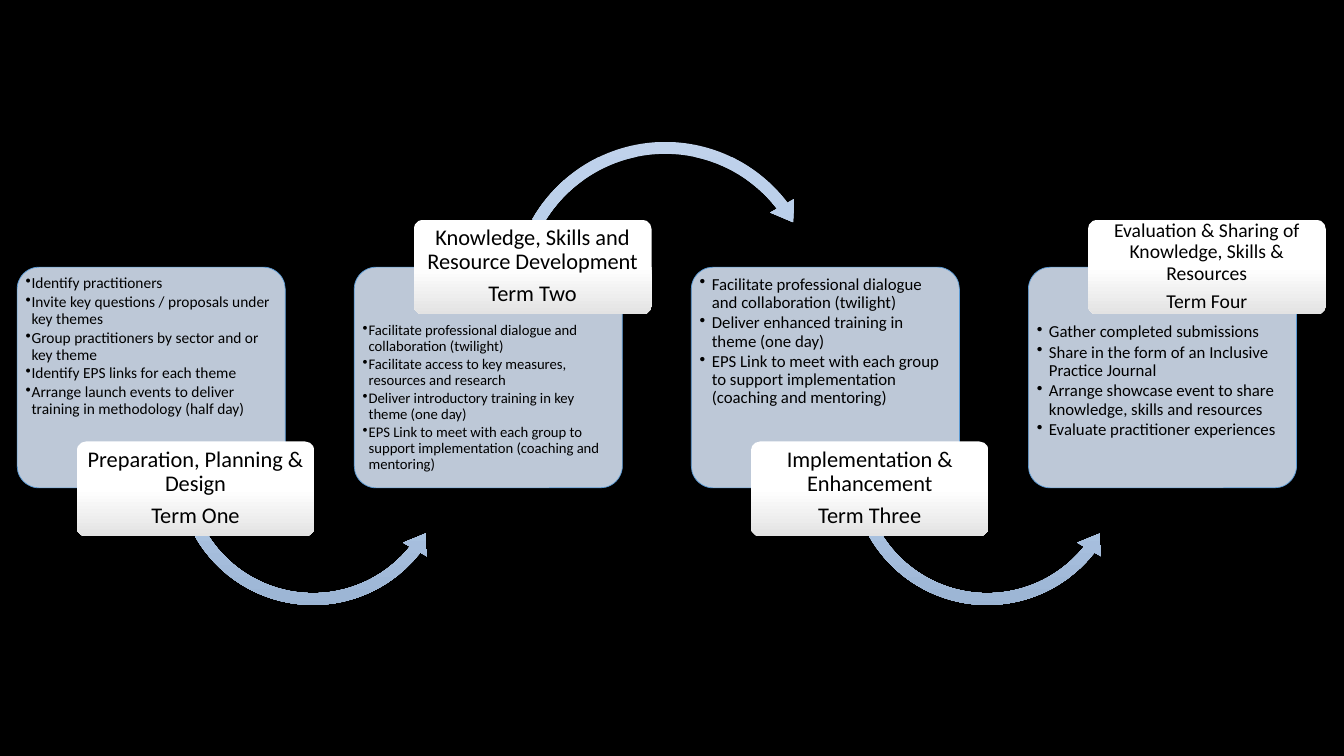
from copy import deepcopy
from dataclasses import dataclass

from pptx import Presentation
from pptx.dml.color import RGBColor
from pptx.enum.shapes import MSO_SHAPE
from pptx.enum.text import MSO_ANCHOR, PP_ALIGN
from pptx.oxml.ns import qn
from pptx.util import Inches, Pt

ROUND_RECT = MSO_SHAPE.ROUNDED_RECTANGLE
ARC_OVER = MSO_SHAPE.CIRCULAR_ARROW
ARC_UNDER = MSO_SHAPE.LEFT_CIRCULAR_ARROW
TOP, MIDDLE = MSO_ANCHOR.TOP, MSO_ANCHOR.MIDDLE
LEFT, CENTER = PP_ALIGN.LEFT, PP_ALIGN.CENTER

FONT = "Calibri"
COLORS = {"background": "000000", "text": "000000", "card": "D2DEEF", "card_line": "5B9BD5"}
GRADIENTS = {
    "arrow": ("C0D2EB", "B3CBE9", "9BB4D3"),
    "label": ("FFFFFF", "FFFFFF", "E3E3E3"),
}

# Grid in inches: four equal columns, offsets counted from a column's left edge
MARGIN = 0.17
COLUMN = (10.2 - MARGIN) / 3
CARD_TOP, CARD_W, CARD_H = 2.65, 2.66, 2.19
LABEL_DX, LABEL_W, LABEL_H = 0.59, 2.36, 0.94
LABEL_HIGH, LABEL_LOW = 2.18, 4.38


@dataclass
class Stage:
    title: str
    term: str
    title_size: float
    tasks: list[str]
    task_size: float
    indent: float


@dataclass
class Arc:
    kind: MSO_SHAPE
    dx: float
    top: float
    size: float
    adjustments: tuple[float, ...]


UNDER = Arc(ARC_UNDER, 1.51, 3.23, 2.85, (0.041, 5.173, 22.928, 90.245, 0.048))
OVER = Arc(ARC_OVER, 1.49, 1.33, 3.19, (0.037, 4.639, 193.606, 125.755, 0.043))

STAGES = [
    Stage("Preparation, Planning & Design", "Term One", 16, [
        "Identify practitioners",
        "Invite key questions / proposals under key themes",
        "Group practitioners by sector and or key theme",
        "Identify EPS links for each theme",
        "Arrange launch events to deliver training in methodology (half day)",
    ], 11, 0.06),
    Stage("Knowledge, Skills and Resource Development", "Term Two", 16, [
        "Facilitate professional dialogue and collaboration (twilight)",
        "Facilitate access to key measures, resources and research",
        "Deliver introductory training in key theme (one day)",
        "EPS Link to meet with each group to support implementation (coaching and mentoring)",
    ], 10.5, 0.06),
    Stage("Implementation & Enhancement", "Term Three", 16, [
        "Facilitate professional dialogue and collaboration (twilight)",
        "Deliver enhanced training in theme (one day)",
        "EPS Link to meet with each group to support implementation (coaching and mentoring)",
    ], 12, 0.12),
    Stage("Evaluation & Sharing of Knowledge, Skills & Resources", "Term Four", 14, [
        "Gather completed submissions",
        "Share in the form of an Inclusive Practice Journal",
        "Arrange showcase event to share knowledge, skills and resources",
        "Evaluate practitioner experiences",
    ], 12, 0.12),
]


def rgb(name: str) -> RGBColor:
    return RGBColor.from_string(COLORS[name])


def add_shape(s, kind: MSO_SHAPE, column: int, dx: float, top: float, width: float,
              height: float, adjustments: tuple[float, ...]):
    sp = s.shapes.add_shape(kind, Inches(MARGIN + column * COLUMN + dx), Inches(top),
                            Inches(width), Inches(height))
    sp.shadow.inherit = False
    for i, value in enumerate(adjustments):
        sp.adjustments[i] = value
    return sp


def fill_gradient(sp, name: str) -> None:
    """Three evenly spaced stops running from top to bottom, without an outline."""
    sp.fill.gradient()
    sp.fill.gradient_angle = 270
    stop_list = next(sp.element.spPr.iter(qn("a:gsLst")))
    stop_list.insert(1, deepcopy(stop_list[0]))
    for i, (stop, color) in enumerate(zip(sp.fill.gradient_stops, GRADIENTS[name])):
        stop.position = i / 2
        stop.color.rgb = RGBColor.from_string(color)
    sp.line.fill.background()


def write(sp, lines: list[str], size: float, gap: float, align: PP_ALIGN, anchor: MSO_ANCHOR,
          insets: tuple[float, float], indent: float = 0) -> None:
    """Fill a shape with paragraphs; gap is a share of the text size."""
    tf = sp.text_frame
    tf.word_wrap = True
    tf.vertical_anchor = anchor
    tf.margin_left = tf.margin_right = tf.margin_bottom = Inches(insets[0])
    tf.margin_top = Inches(insets[1])
    tf.text = "\n".join(lines)
    for p in tf.paragraphs:
        p.alignment = align
        p.line_spacing = 0.9
        p.space_after = Pt(size * gap)
        if indent:
            p.level = 1
            pPr = p._p.get_or_add_pPr()
            pPr.set("marL", str(Inches(indent)))
            pPr.set("indent", str(-Inches(indent)))
            bullet = pPr.makeelement(qn("a:buChar"), {"char": "•"})
            pPr.append(bullet)
        for r in p.runs:
            r.font.name = FONT
            r.font.size = Pt(size)
            r.font.color.rgb = rgb("text")


def add_card(s, column: int, stage: Stage, label_high: bool) -> None:
    sp = add_shape(s, ROUND_RECT, column, 0, CARD_TOP, CARD_W, CARD_H, (0.1,))
    sp.fill.solid()
    sp.fill.fore_color.rgb = rgb("card")
    color = next(sp.element.spPr.iter(qn("a:srgbClr")))
    color.append(color.makeelement(qn("a:alpha"), {"val": "90000"}))
    sp.line.color.rgb = rgb("card_line")
    sp.line.width = Pt(0.5)
    top_inset = 0.49 if label_high else 0.02
    write(sp, stage.tasks, stage.task_size, 0.15, LEFT, TOP, (0.02, top_inset), stage.indent)


def add_arc(s, column: int, arc: Arc) -> None:
    sp = add_shape(s, arc.kind, column, arc.dx, arc.top, arc.size, arc.size, arc.adjustments)
    fill_gradient(sp, "arrow")


def add_label(s, column: int, stage: Stage, high: bool) -> None:
    top = LABEL_HIGH if high else LABEL_LOW
    sp = add_shape(s, ROUND_RECT, column, LABEL_DX, top, LABEL_W, LABEL_H, (0.1,))
    fill_gradient(sp, "label")
    write(sp, [stage.title, stage.term], stage.title_size, 0.35, CENTER, MIDDLE, (0.03, 0.02))


def main() -> None:
    prs = Presentation()
    prs.slide_width, prs.slide_height = Inches(13.33), Inches(7.5)
    s = prs.slides.add_slide(prs.slide_layouts[6])
    s.background.fill.solid()
    s.background.fill.fore_color.rgb = rgb("background")

    # Labels alternate low and high; an arc leads from each stage to the next
    for column, stage in enumerate(STAGES):
        high = column % 2 == 1
        add_card(s, column, stage, high)
        if column < len(STAGES) - 1:
            add_arc(s, column, OVER if high else UNDER)
        add_label(s, column, stage, high)

    prs.save("out.pptx")


if __name__ == "__main__":
    main()
